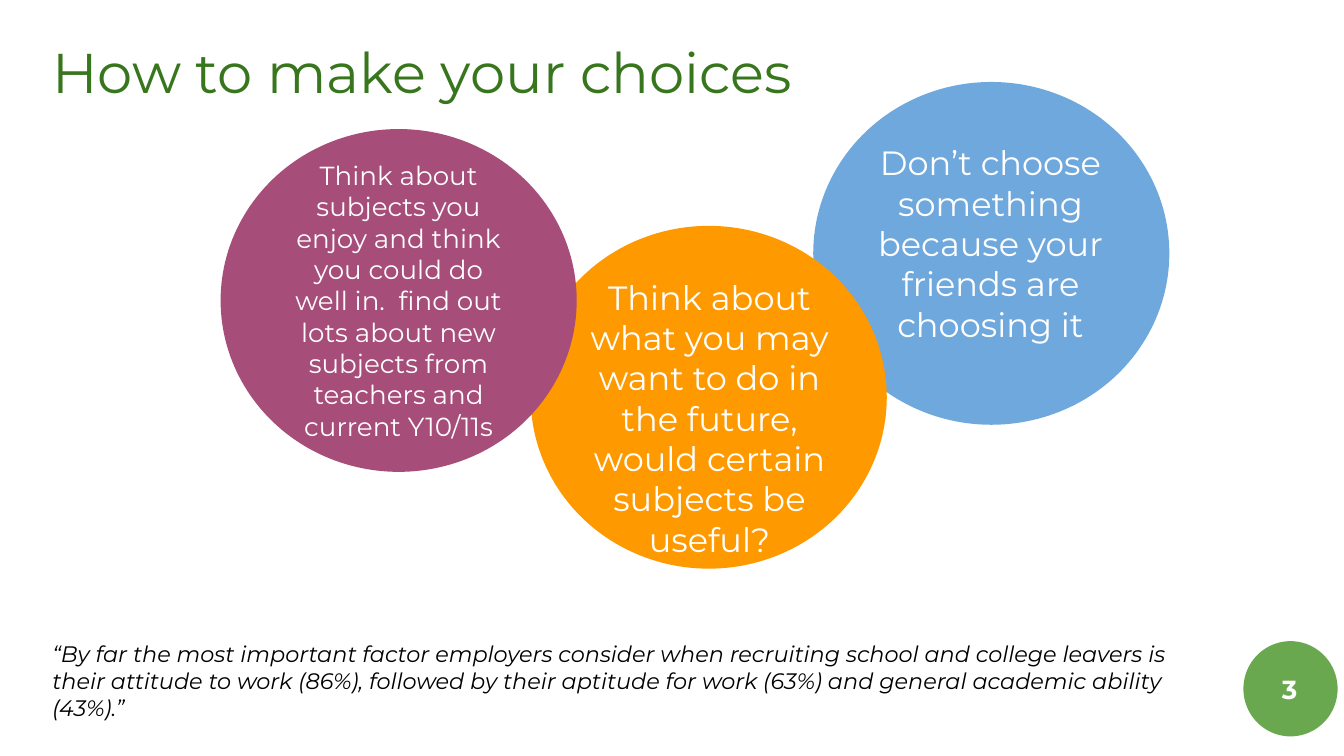
from pptx import Presentation
from pptx.dml.color import RGBColor
from pptx.enum.shapes import MSO_SHAPE
from pptx.enum.text import MSO_ANCHOR, PP_ALIGN
from pptx.util import Cm, Pt

OVAL = MSO_SHAPE.OVAL
TOP, MIDDLE = MSO_ANCHOR.TOP, MSO_ANCHOR.MIDDLE
LEFT, CENTER = PP_ALIGN.LEFT, PP_ALIGN.CENTER

FONT = "Montserrat"
COLORS = {
    "title": "38761D", "blue": "6FA8DC", "orange": "FF9900", "purple": "A64D79",
    "badge": "6AA84F", "white": "FFFFFF", "black": "000000",
}
INSET = 0.25
CIRCLE = (6.73, 6.48)

ENJOY = ("Think about subjects you enjoy and think you could do well in.  "
         "find out lots about new subjects from teachers and current Y10/11s")
FUTURE = "Think about what you may want to do in the future, would certain subjects be useful?"
FRIENDS = "Don’t choose something because your friends are choosing it"
QUOTE = ("“By far the most important factor employers consider when recruiting school and "
         "college leavers is their attitude to work (86%), followed by their aptitude for "
         "work (63%) and general academic ability (43%).”")

# colour, (left, top, width, height) in cm, from back to front
CIRCLES = [
    ("blue", (15.37, 1.55, *CIRCLE)),
    ("orange", (10.03, 4.27, *CIRCLE)),
    ("purple", (4.17, 2.44, *CIRCLE)),
    ("badge", (23.5, 12.12, 1.78, 1.8)),
]
# text, box in cm, colour, alignment, font format
TEXTS = [
    ("How to make your choices", (0.74, 0.46, 16.79, 1.8), "title", LEFT, {"size": Pt(30)}),
    (FUTURE, (10.69, 4.98, 5.44, 2.57), "white", CENTER, {"size": Pt(18)}),
    (FRIENDS, (16.33, 2.44, 4.78, 6.48), "white", CENTER, {"size": Pt(18)}),
    ("3", (23.88, 12.47, 0.99, 1.12), "white", CENTER, {"size": Pt(14), "bold": True}),
    (QUOTE, (0.74, 11.86, 21.77, 2.06), "black", LEFT, {"size": Pt(12), "italic": True}),
]


def rgb(name):
    return RGBColor.from_string(COLORS[name])


def add_circle(s, color, box):
    sp = s.shapes.add_shape(OVAL, *map(Cm, box))
    sp.shadow.inherit = False
    sp.fill.solid()
    sp.fill.fore_color.rgb = rgb(color)
    sp.line.fill.background()
    return sp


def write(sp, text, color, align, fmt, anchor=TOP):
    tf = sp.text_frame
    tf.word_wrap = True
    tf.vertical_anchor = anchor
    for side in ("left", "top", "right", "bottom"):
        setattr(tf, f"margin_{side}", Cm(INSET))
    p = tf.paragraphs[0]
    p.alignment = align
    r = p.add_run()
    r.text = text
    r.font.color.rgb = rgb(color)
    for name, value in {"name": FONT, **fmt}.items():
        setattr(r.font, name, value)


prs = Presentation()
prs.slide_width, prs.slide_height = Cm(25.4), Cm(14.29)
s = prs.slides.add_slide(prs.slide_layouts[6])

circles = {color: add_circle(s, color, box) for color, box in CIRCLES}
write(circles["purple"], ENJOY, "white", CENTER, {"size": Pt(14)}, MIDDLE)
for text, box, color, align, fmt in TEXTS:
    write(s.shapes.add_textbox(*map(Cm, box)), text, color, align, fmt)

prs.save("out.pptx")
